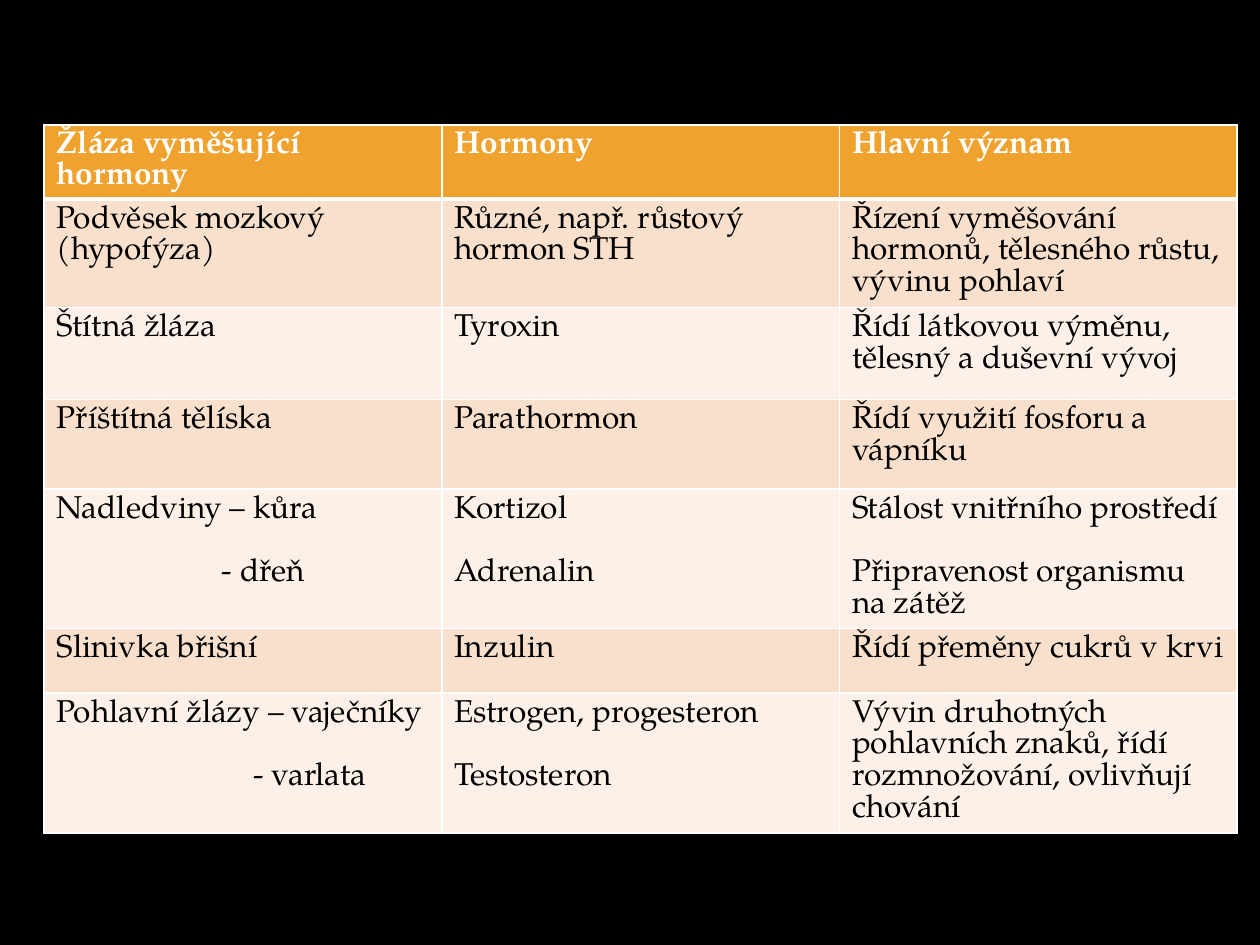
import pptx
import pptx.util
import pptx.dml.color
import pptx.oxml
import pptx.oxml.ns

FONT, SIZE, LINE = "TeX Gyre Pagella", 18, 18.2
WHITE, BLACK = "FFFFFF", "000000"
HEAD, BANDS = "F0A22E", ("F9E0CD", "FCF0E8")
LEFT, TOP, WIDTH = 0.35, 0.99, 9.47

# Row height, then one tuple of paragraphs per cell
ROWS = [
    (0.59, [("Žláza vyměšující hormony",), ("Hormony",), ("Hlavní význam",)]),
    (0.86, [("Podvěsek mozkový (hypofýza)",),
            ("Různé, např. růstový hormon STH",),
            ("Řízení vyměšování hormonů, tělesného růstu, vývinu pohlaví",)]),
    (0.73, [("Štítná žláza",), ("Tyroxin",),
            ("Řídí látkovou výměnu, tělesný a duševní vývoj",)]),
    (0.71, [("Příštítná tělíska",), ("Parathormon",),
            ("Řídí využití fosforu a vápníku",)]),
    (1.11, [("Nadledviny – kůra", "- dřeň"), ("Kortizol", "Adrenalin"),
            ("Stálost vnitřního prostředí", "Připravenost organismu na zátěž")]),
    (0.51, [("Slinivka břišní",), ("Inzulin",), ("Řídí přeměny cukrů v krvi",)]),
    (1.11, [("Pohlavní žlázy – vaječníky", "- varlata"),
            ("Estrogen, progesteron", "Testosteron"),
            ("Vývin druhotných pohlavních znaků, řídí rozmnožování, "
             "ovlivňují chování",)]),
]
INDENT = {"- dřeň": 1.31, "- varlata": 1.56}


def color(code):
    return pptx.dml.color.RGBColor.from_string(code)


def border(cell, row):
    """Draw white edges, with a thick one under the header row."""
    props = cell._tc.get_or_add_tcPr()
    thick = {(0, "B"), (1, "T")}
    for side in "LRTB":
        width = pptx.util.Pt(3 if (row, side) in thick else 1)
        props.append(pptx.oxml.parse_xml(
            f'<a:ln{side} {pptx.oxml.ns.nsdecls("a")} w="{width}">'
            f'<a:solidFill><a:srgbClr val="{WHITE}"/></a:solidFill></a:ln{side}>'))


def write(cell, texts, head):
    frame = cell.text_frame
    for n, text in enumerate(texts):
        para = frame.add_paragraph() if n else frame.paragraphs[0]
        if n:
            para.space_before = pptx.util.Pt(LINE)
        if text in INDENT:
            para._p.get_or_add_pPr().set(
                "marL", str(pptx.util.Inches(INDENT[text])))
        run = para.add_run()
        run.text = text
        font = run.font
        font.name, font.size, font.bold = FONT, pptx.util.Pt(SIZE), head
        font.color.rgb = color(WHITE if head else BLACK)


def main():
    deck = pptx.Presentation()
    inch = pptx.util.Inches
    deck.slide_width, deck.slide_height = inch(10), inch(7.5)
    slide = deck.slides.add_slide(deck.slide_layouts[6])
    slide.background.fill.solid()
    slide.background.fill.fore_color.rgb = color(BLACK)

    tall = sum(height for height, _ in ROWS)
    table = slide.shapes.add_table(
        len(ROWS), len(ROWS[0][1]),
        inch(LEFT), inch(TOP), inch(WIDTH), inch(tall)).table
    for r, (height, cells) in enumerate(ROWS):
        table.rows[r].height = inch(height)
        for c, texts in enumerate(cells):
            cell = table.cell(r, c)
            border(cell, r)
            cell.fill.solid()
            cell.fill.fore_color.rgb = color(BANDS[(r - 1) % 2] if r else HEAD)
            write(cell, texts, r == 0)
    deck.save("out.pptx")


if __name__ == "__main__":
    main()
